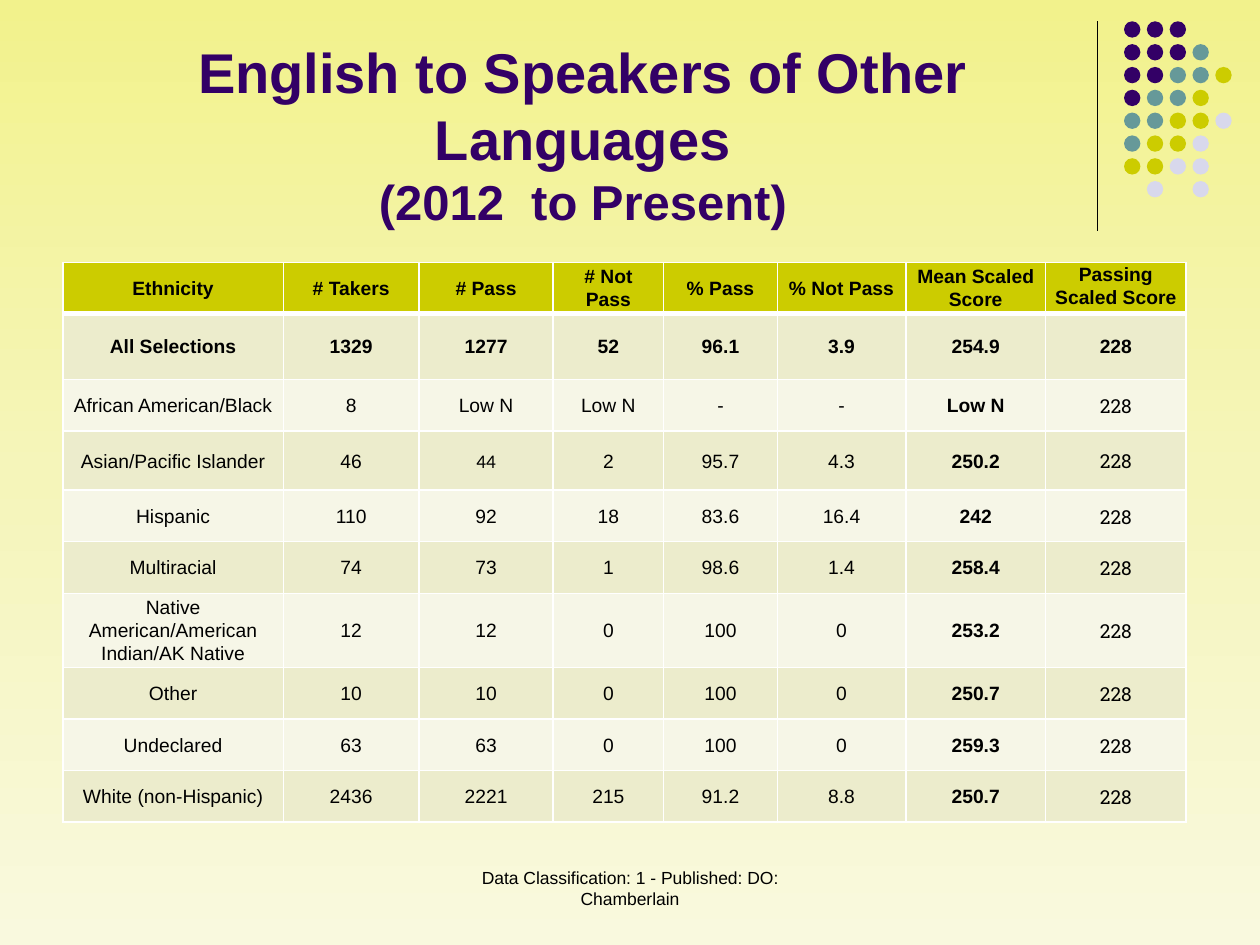
import copy

import lxml.etree
import pptx
import pptx.dml.color
import pptx.enum.shapes
import pptx.enum.text
import pptx.oxml.ns
import pptx.util
from pptx.util import Cm

# Content
TITLE = "English to Speakers of Other Languages\v(2012  to Present)"
TITLE_SIZES = (32, 28)
FOOTER = "Data Classification: 1 - Published: DO: Chamberlain"
HEADER = ("Ethnicity", "# Takers", "# Pass", "# Not Pass", "% Pass",
          "% Not Pass", "Mean Scaled Score", "Passing Scaled Score")
RESULTS = [
    ("All Selections", "1329", "1277", "52", "96.1", "3.9", "254.9"),
    ("African American/Black", "8", "Low N", "Low N", "-", "-", "Low N"),
    ("Asian/Pacific Islander", "46", "44", "2", "95.7", "4.3", "250.2"),
    ("Hispanic", "110", "92", "18", "83.6", "16.4", "242"),
    ("Multiracial", "74", "73", "1", "98.6", "1.4", "258.4"),
    ("Native American/American Indian/AK Native",
     "12", "12", "0", "100", "0", "253.2"),
    ("Other", "10", "10", "0", "100", "0", "250.7"),
    ("Undeclared", "63", "63", "0", "100", "0", "259.3"),
    ("White (non-Hispanic)", "2436", "2221", "215", "91.2", "8.8", "250.7"),
]
PASSING_SCORE = "228"
COLUMN_WIDTHS = (4.44, 2.74, 2.7, 2.23, 2.29, 2.59, 2.82, 2.83)
ROW_HEIGHTS = (1.03, 1.33, 1.04, 1.19, 1.04, 1.04, 1.37, 1.04, 1.04, 1.04)
MEAN_COLUMN, PASSING_COLUMN = 6, 7

# Dot pattern: one letter per dot, a space leaves a gap
DOT_ROWS = ("PPP", "PPPT", "PPTTY", "PTTY", "TTYYL", "TYYL", "YYLL", " L L")
DOT_COLOURS = {"P": "330066", "T": "669999", "Y": "CCCC00", "L": "D8D8EC"}
DOT_LEFT, DOT_TOP, DOT_SIZE, DOT_PITCH = 22.66, 0.43, 0.33, 0.46

BACKGROUND_STOPS = ((0, "F2F28C"), (50, "F5F5BA"), (100, "F9F9DE"))
PURPLE, BLACK, WHITE = "330066", "000000", "FFFFFF"
HEADER_FILL, BAND_FILLS = "CCCC00", ("ECECCC", "F6F6E7")

MIDDLE = pptx.enum.text.MSO_ANCHOR.MIDDLE
TOP = pptx.enum.text.MSO_ANCHOR.TOP
CENTER = pptx.enum.text.PP_ALIGN.CENTER


def rgb(colour):
    return pptx.dml.color.RGBColor.from_string(colour)


def format_run(run, size, colour=BLACK, bold=False, font="Arial"):
    run.font.size = pptx.util.Pt(size)
    run.font.color.rgb = rgb(colour)
    run.font.bold = bold
    run.font.name = font


def set_borders(cell, top, bottom):
    properties = cell._tc.get_or_add_tcPr()
    sides = (("lnL", 1), ("lnR", 1), ("lnT", top), ("lnB", bottom))
    for index, (side, width) in enumerate(sides):
        line = lxml.etree.Element(pptx.oxml.ns.qn(f"a:{side}"),
                                  w=str(pptx.util.Pt(width)))
        fill = lxml.etree.SubElement(line, pptx.oxml.ns.qn("a:solidFill"))
        lxml.etree.SubElement(fill, pptx.oxml.ns.qn("a:srgbClr"), val=WHITE)
        properties.insert(index, line)


def add_background(slide):
    fill = slide.background.fill
    fill.gradient()
    fill.gradient_angle = 270
    stop_list = next(slide._element.iter(pptx.oxml.ns.qn("a:gsLst")))
    stop_list.append(copy.deepcopy(stop_list[-1]))
    for stop, (position, colour) in zip(fill.gradient_stops, BACKGROUND_STOPS):
        stop.position = position / 100
        stop.color.rgb = rgb(colour)


def add_decoration(slide):
    line = slide.shapes.add_connector(
        pptx.enum.shapes.MSO_CONNECTOR.STRAIGHT,
        Cm(22.12), Cm(0.43), Cm(22.12), Cm(4.65))
    line.line.color.rgb = rgb(BLACK)
    line.line.width = pptx.util.Pt(0.75)
    lxml.etree.SubElement(line._element.spPr, pptx.oxml.ns.qn("a:effectLst"))

    dots = slide.shapes.add_group_shape()
    for row, pattern in enumerate(DOT_ROWS):
        for column, letter in enumerate(pattern):
            if letter == " ":
                continue
            dot = dots.shapes.add_shape(
                pptx.enum.shapes.MSO_SHAPE.OVAL,
                Cm(DOT_LEFT + column * DOT_PITCH),
                Cm(DOT_TOP + row * DOT_PITCH), Cm(DOT_SIZE), Cm(DOT_SIZE))
            dot.shadow.inherit = False
            dot.fill.solid()
            dot.fill.fore_color.rgb = rgb(DOT_COLOURS[letter])
            dot.line.fill.background()


def add_title(slide):
    title = slide.shapes.title
    title.left, title.top = Cm(1.27), Cm(0.64)
    title.width, title.height = Cm(20.96), Cm(4.13)
    frame = title.text_frame
    frame.text = TITLE
    frame.word_wrap = True
    frame.auto_size = pptx.enum.text.MSO_AUTO_SIZE.NONE
    frame.vertical_anchor = pptx.enum.text.MSO_ANCHOR.BOTTOM
    paragraph = frame.paragraphs[0]
    paragraph.alignment = CENTER
    for run, size in zip(paragraph.runs, TITLE_SIZES):
        format_run(run, size, PURPLE, True)
    # The line break takes the size of the first line
    line_break = paragraph._p.find(pptx.oxml.ns.qn("a:br"))
    lxml.etree.SubElement(line_break, pptx.oxml.ns.qn("a:rPr"),
                          sz=str(TITLE_SIZES[0] * 100))


def add_footer(slide):
    footer = slide.shapes.add_textbox(Cm(8.68), Cm(17.35), Cm(8.04), Cm(1.27))
    footer.text_frame.word_wrap = True
    footer.text_frame.text = FOOTER
    paragraph = footer.text_frame.paragraphs[0]
    paragraph.alignment = CENTER
    format_run(paragraph.runs[0], 10)


def fill_cell(cell, text, row, column):
    is_header = row == 0
    cell.text = text
    cell.margin_left = cell.margin_right = Cm(0.18)
    cell.margin_top = cell.margin_bottom = 0
    cell.vertical_anchor = (
        TOP if is_header and column == PASSING_COLUMN else MIDDLE)
    cell.fill.solid()
    cell.fill.fore_color.rgb = rgb(
        HEADER_FILL if is_header else BAND_FILLS[(row - 1) % 2])
    set_borders(cell, 3 if row == 1 else 1, 3 if is_header else 1)

    font = "Arial"
    if row > 1 and column == PASSING_COLUMN:
        font = "Roboto Slab"
    elif text == "44":
        font = "Calibri"
    paragraph = cell.text_frame.paragraphs[0]
    paragraph.alignment = CENTER
    paragraph.line_spacing = 1.07
    format_run(paragraph.runs[0], 11, font=font,
               bold=row < 2 or column == MEAN_COLUMN)


def add_results_table(slide):
    rows = [HEADER] + [result + (PASSING_SCORE,) for result in RESULTS]
    table = slide.shapes.add_table(
        len(rows), len(HEADER), Cm(1.27), Cm(5.29),
        Cm(sum(COLUMN_WIDTHS)), Cm(sum(ROW_HEIGHTS))).table
    for column, width in zip(table.columns, COLUMN_WIDTHS):
        column.width = Cm(width)
    for row, height in zip(table.rows, ROW_HEIGHTS):
        row.height = Cm(height)
    for row, texts in enumerate(rows):
        for column, text in enumerate(texts):
            fill_cell(table.cell(row, column), text, row, column)


def main():
    presentation = pptx.Presentation()
    presentation.slide_width, presentation.slide_height = Cm(25.4), Cm(19.05)
    slide = presentation.slides.add_slide(presentation.slide_layouts[5])
    add_background(slide)
    add_decoration(slide)
    add_title(slide)
    add_footer(slide)
    add_results_table(slide)
    presentation.save("out.pptx")


if __name__ == "__main__":
    main()
